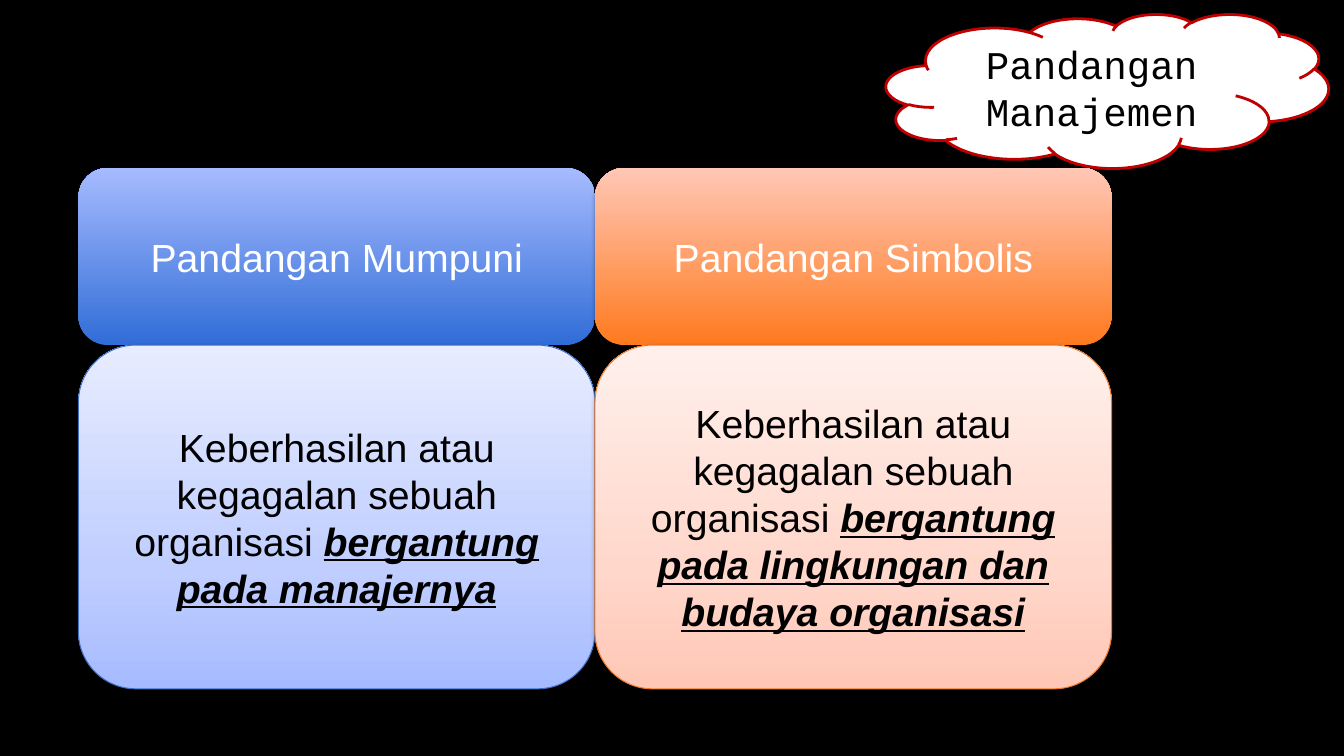
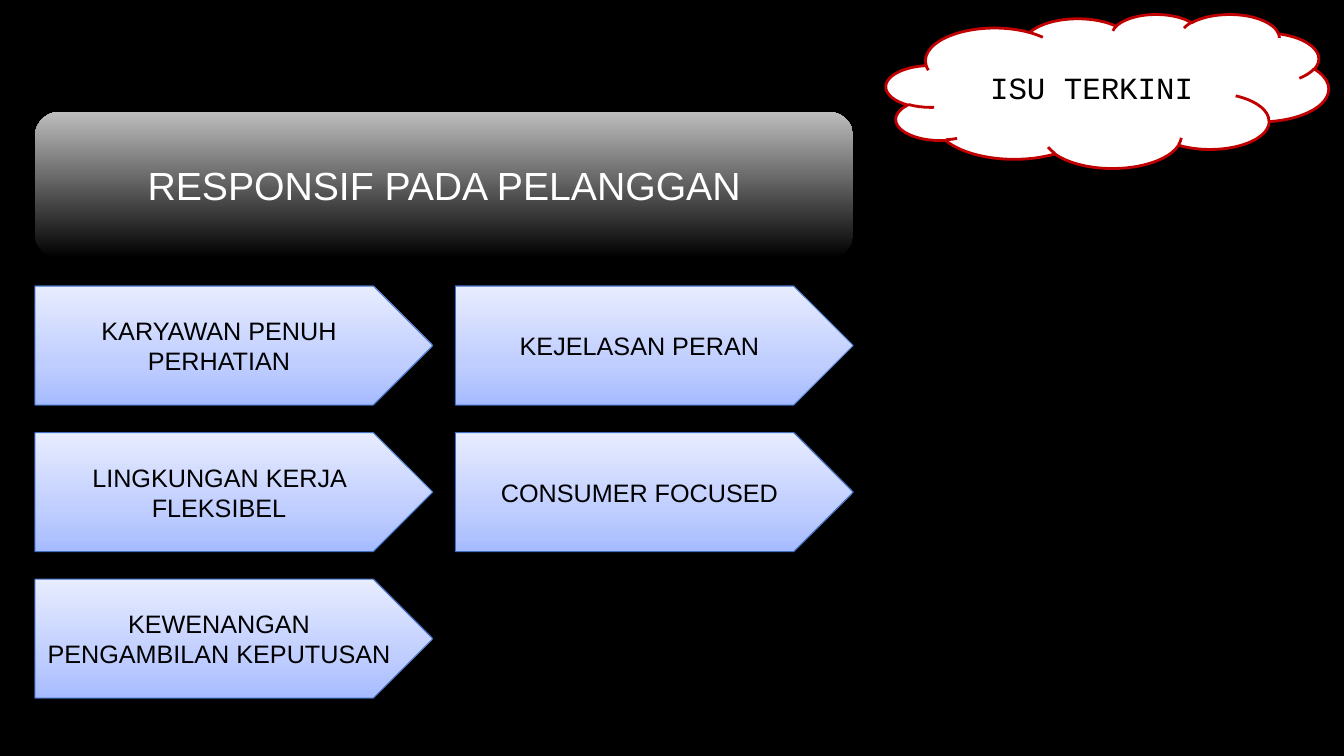
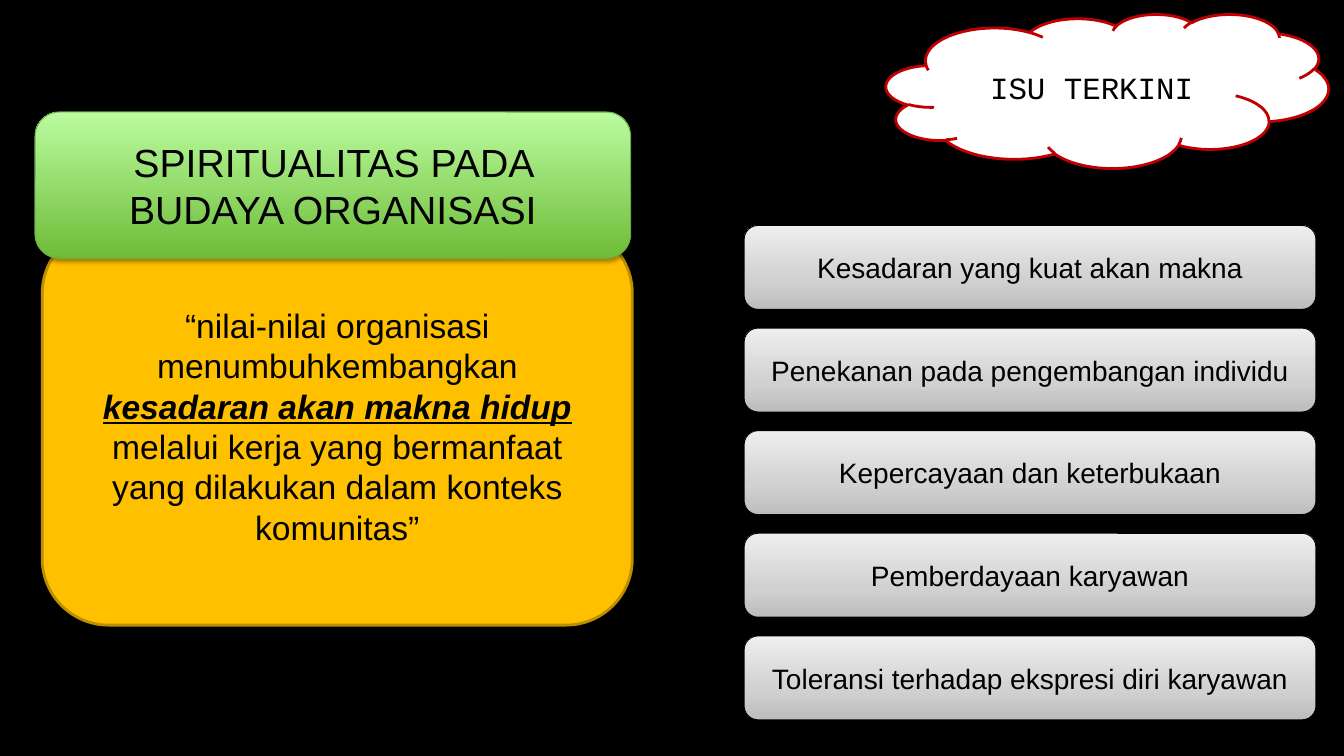
from lxml import etree
from pptx import Presentation
from pptx.dml.color import RGBColor
from pptx.enum import shapes, text
from pptx.oxml import ns
from pptx.util import Pt

COLOURS = {
    "black": "000000", "white": "FFFFFF", "red": "C00000",
    "amber": "FFC000", "amber_edge": "BD8E00",
    "blue_edge": "3F6FC3", "orange_edge": "EC792B", "green_edge": "6DAC43",
}
# Each gradient runs from bottom to top: (position in percent, colour).
GRADIENTS = {
    "blue": [(0, "316DD7"), (100, "A6BBFF")],
    "orange": [(0, "FF7A1F"), (100, "FFC7B6")],
    "grey": [(0, "000000"), (100, "BDBDBD")],
    "green": [(0, "6DBC38"), (100, "BBFCA0")],
    "pale_blue": [(0, "A6BBFF"), (35, "C0CEFF"), (100, "E7ECFF")],
    "pale_orange": [(0, "FFC7B6"), (35, "FFD7CB"), (100, "FFF0EB")],
    "pale_grey": [(0, "BDBDBD"), (35, "D1D1D1"), (100, "EEEEEE")],
}
ROUNDED = shapes.MSO_SHAPE.ROUNDED_RECTANGLE
ARROW = shapes.MSO_SHAPE.PENTAGON
CLOUD = shapes.MSO_SHAPE.CLOUD


def rgb(name):
    return RGBColor.from_string(COLOURS[name])


def add_element(parent, tag, **attributes):
    values = {key: str(value) for key, value in attributes.items()}
    return etree.SubElement(parent, ns.qn(tag), values)


class Deck:
    def __init__(self):
        self.prs = Presentation()
        self.prs.slide_width, self.prs.slide_height = Pt(960), Pt(540)
        background = self.prs.slide_master.background.fill
        background.solid()
        background.fore_color.rgb = rgb("black")
        self.slide = None

    def new_slide(self, topic, size):
        """Start a slide with its topic in the cloud at the top right."""
        self.slide = self.prs.slides.add_slide(self.prs.slide_layouts[6])
        self.plain(CLOUD, (633, 10, 316, 110), [topic], size, "white", "red", "Courier New")

    def shape(self, kind, box, parts, size, edge, edge_width, colour="black", font="Arial"):
        """Add a shape with centred text; every second part is emphasised."""
        shape = self.slide.shapes.add_shape(kind, *map(Pt, box))
        shape.shadow.inherit = False
        if edge:
            shape.line.color.rgb = rgb(edge)
            shape.line.width = Pt(edge_width)
        else:
            shape.line.fill.background()
        paragraph = shape.text_frame.paragraphs[0]
        paragraph.alignment = text.PP_ALIGN.CENTER
        for index, part in enumerate(parts):
            run = paragraph.add_run()
            run.text = part
            run.font.name, run.font.size = font, Pt(size)
            run.font.color.rgb = rgb(colour)
            if index % 2:
                run.font.bold = run.font.italic = run.font.underline = True
        return shape

    def plain(self, kind, box, parts, size, fill, edge, font="Arial"):
        shape = self.shape(kind, box, parts, size, edge, 2, font=font)
        shape.fill.solid()
        shape.fill.fore_color.rgb = rgb(fill)

    def glossy(self, kind, box, parts, size, gradient, edge=None, colour="black"):
        """Add a shape with a vertical gradient and a soft shadow below it."""
        shape = self.shape(kind, box, parts, size, edge, 0.75, colour)
        shape.fill.gradient()
        shape.fill.gradient_angle = 90
        properties = shape.element.spPr
        stops = properties.find(".//" + ns.qn("a:gsLst"))
        for stop in list(stops):
            stops.remove(stop)
        for position, value in GRADIENTS[gradient]:
            stop = add_element(stops, "a:gs", pos=position * 1000)
            add_element(stop, "a:srgbClr", val=value)
        pale = gradient.startswith("pale")
        shadow = add_element(
            properties.find(ns.qn("a:effectLst")), "a:outerShdw", blurRad=Pt(3.1),
            dist=Pt(1.6 if pale else 1.8), dir=5400000, rotWithShape=0)
        tint = add_element(shadow, "a:srgbClr", val=COLOURS["black"])
        add_element(tint, "a:alpha", val=38000 if pale else 35000)


def management_views(deck):
    deck.new_slide("Pandangan Manajemen", 28)
    views = [
        ("Pandangan Mumpuni", "bergantung pada manajernya", "blue"),
        ("Pandangan Simbolis", "bergantung pada lingkungan dan budaya organisasi", "orange"),
    ]
    width = 369
    for column, (view, cause, hue) in enumerate(views):
        left = 56 + column * width
        deck.glossy(ROUNDED, (left, 120, width, 126.5), [view], 28, hue, colour="white")
        deck.glossy(ROUNDED, (left, 246.5, width, 245.5),
                    ["Keberhasilan atau kegagalan sebuah organisasi ", cause],
                    28, "pale_" + hue, hue + "_edge")


def customer_response(deck):
    deck.new_slide("ISU TERKINI", 22)
    deck.glossy(ROUNDED, (25, 80, 584.5, 104.5), ["RESPONSIF PADA PELANGGAN"],
                28, "grey", colour="white")
    factors = [
        "KARYAWAN PENUH PERHATIAN", "KEJELASAN PERAN",
        "LINGKUNGAN KERJA FLEKSIBEL", "CONSUMER FOCUSED",
        "KEWENANGAN PENGAMBILAN KEPUTUSAN",
    ]
    for index, factor in enumerate(factors):
        row, column = divmod(index, 2)
        box = (25 + column * 300.3, 204.3 + row * 104.7, 284.2, 85)
        deck.glossy(ARROW, box, [factor], 18, "pale_blue", "blue_edge")


def spirituality(deck):
    deck.new_slide("ISU TERKINI", 22)
    definition = [
        "“nilai-nilai organisasi menumbuhkembangkan ",
        "kesadaran akan makna hidup",
        " melalui kerja yang bermanfaat yang dilakukan dalam konteks komunitas”",
    ]
    deck.plain(ROUNDED, (30.2, 162, 421.5, 284.5), definition, 24, "amber", "amber_edge")
    deck.glossy(ROUNDED, (25, 80, 425.5, 104.5), ["SPIRITUALITAS PADA BUDAYA ORGANISASI"],
                28, "green", "green_edge")
    traits = [
        "Kesadaran yang kuat akan makna",
        "Penekanan pada pengembangan individu",
        "Kepercayaan dan keterbukaan",
        "Pemberdayaan karyawan",
        "Toleransi terhadap ekspresi diri karyawan",
    ]
    for row, trait in enumerate(traits):
        deck.glossy(ROUNDED, (531.5, 161 + row * 73.3, 408.5, 60), [trait],
                    20, "pale_grey", "black")


def main():
    deck = Deck()
    management_views(deck)
    customer_response(deck)
    spirituality(deck)
    deck.prs.save("out.pptx")


if __name__ == "__main__":
    main()
